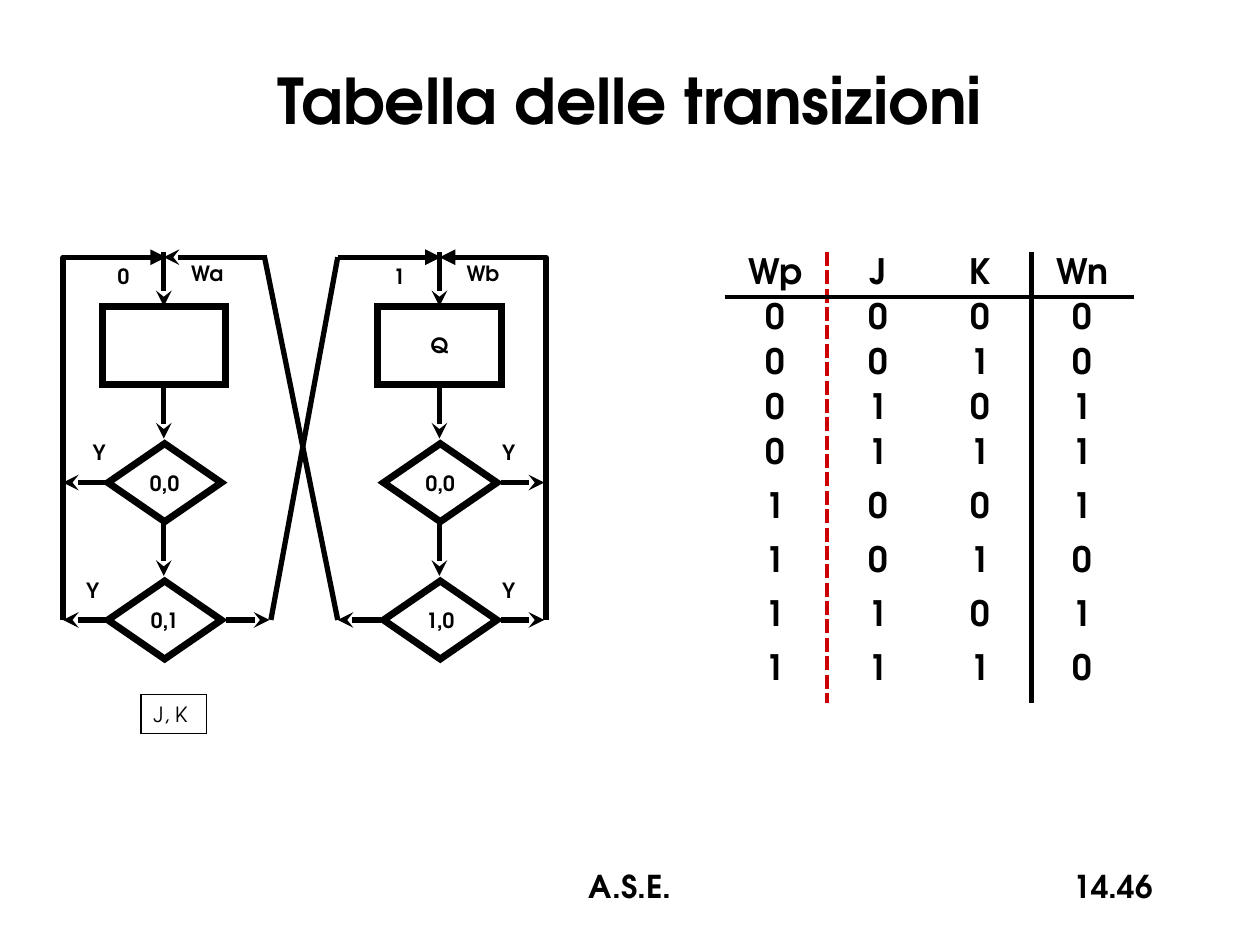
"""Build a slide with a JK flip-flop flow chart and its transition table."""
from typing import NamedTuple, Optional

from lxml import etree
from pptx import Presentation
from pptx.dml.color import RGBColor
from pptx.enum.shapes import MSO_CONNECTOR, MSO_SHAPE
from pptx.enum.text import MSO_ANCHOR, MSO_AUTO_SIZE, PP_ALIGN
from pptx.oxml.ns import qn
from pptx.util import Pt

STRAIGHT = MSO_CONNECTOR.STRAIGHT
RECT, DIAMOND = MSO_SHAPE.RECTANGLE, MSO_SHAPE.DIAMOND
TOP, MIDDLE = MSO_ANCHOR.TOP, MSO_ANCHOR.MIDDLE
LEFT, CENTER, RIGHT = PP_ALIGN.LEFT, PP_ALIGN.CENTER, PP_ALIGN.RIGHT
FIT = MSO_AUTO_SIZE.SHAPE_TO_FIT_TEXT
FONT, BLACK, RED = "TeX Gyre Adventor", "000000", "CC0000"
COLUMN_STEP, TEST_STEP = 157.5, 78.5
AXIS, BUS_Y, TEST_Y = 93.6, 147, 275.75
EXIT_Y = TEST_Y + TEST_STEP


class Label(NamedTuple):
    text: str
    x: float
    y: float
    w: float
    h: float = 21.6
    size: float = 12
    align: PP_ALIGN = CENTER
    anchor: MSO_ANCHOR = TOP
    wrap: bool = False


class Box(NamedTuple):
    kind: MSO_SHAPE
    x: float
    y: float
    w: float
    h: float
    text: str = ""
    width: float = 4
    bold: bool = True
    align: PP_ALIGN = CENTER


class Line(NamedTuple):
    x1: float
    y1: float
    x2: float
    y2: float
    tail: Optional[str] = "stealth"


class State(NamedTuple):
    value: str
    name: str
    content: str
    tests: tuple


LABELS = [
    Label("Tabella delle transizioni", 12, 12, 696, 90, 36, anchor=MIDDLE, wrap=True),
    Label("Y", 45.4, 247.7, 22.3),
    Label("Y", 41.8, 326.2, 22.3),
    Label("Y", 279.4, 247.7, 22.3),
    Label("Y", 279.4, 326.2, 22.3),
    Label("14.46", 516, 492, 150, 36, 18, RIGHT, wrap=True),
    Label("A.S.E.", 246, 492, 228, 36, 18, wrap=True),
]
STATES = [
    State("0", "Wa", "", ("0,0", "0,1")),
    State("1", "Wb", "Q", ("0,0", "1,0")),
]
LINES = [
    Line(62, TEST_Y, 36, TEST_Y),
    Line(61.5, EXIT_Y, 36, EXIT_Y),
    Line(129, EXIT_Y, 154, EXIT_Y),
    Line(152.6, BUS_Y, AXIS, BUS_Y),
    Line(218, EXIT_Y, 193, EXIT_Y),
    Line(193, BUS_Y, 252, BUS_Y, "triangle"),
    Line(286.5, TEST_Y, 311, TEST_Y),
    Line(286.5, EXIT_Y, 311, EXIT_Y),
    Line(154.8, EXIT_Y, 193, BUS_Y, None),
    Line(193, EXIT_Y, 151.2, BUS_Y, None),
]
LOOPS = [(36, 95), (312, 251.2)]
ROWS = ["Wp J K Wn".split(), *map(list, (
    "0000", "0010", "0101", "0111", "1001", "1010", "1101", "1110"))]


def rgb(code: str) -> RGBColor:
    """Turn a hex string into a colour."""
    return RGBColor.from_string(code)


def write(tf, text: str, *, size=12, bold=True, align=CENTER, color=BLACK) -> None:
    """Put one formatted run in the first paragraph."""
    p = tf.paragraphs[0]
    p.alignment = align
    r = p.add_run()
    r.text = text
    r.font.name, r.font.size, r.font.bold = FONT, Pt(size), bold
    r.font.color.rgb = rgb(color)


def stroke(sp, width: float, tail: Optional[str] = None, miter: bool = False) -> None:
    """Give a shape or connector a black line with optional arrowhead and sharp corners."""
    sp.line.color.rgb = rgb(BLACK)
    sp.line.width = Pt(width)
    ln = sp.line._get_or_add_ln()
    if miter:
        etree.SubElement(ln, qn("a:miter"), lim="800000")
    if tail:
        etree.SubElement(ln, qn("a:tailEnd"), type=tail)


def draw_label(s, label: Label) -> None:
    """Draw a text box."""
    sp = s.shapes.add_textbox(Pt(label.x), Pt(label.y), Pt(label.w), Pt(label.h))
    tf = sp.text_frame
    tf.word_wrap, tf.vertical_anchor = label.wrap, label.anchor
    if not label.wrap:
        tf.auto_size = FIT
    write(tf, label.text, size=label.size, align=label.align)


def draw_box(s, box: Box) -> None:
    """Draw an unfilled outlined shape with its text."""
    sp = s.shapes.add_shape(box.kind, Pt(box.x), Pt(box.y), Pt(box.w), Pt(box.h))
    sp.shadow.inherit = False
    sp.fill.background()
    stroke(sp, box.width, miter=True)
    if box.text:
        tf = sp.text_frame
        tf.word_wrap, tf.vertical_anchor = False, MIDDLE
        write(tf, box.text, bold=box.bold, align=box.align)


def draw_line(s, line: Line) -> None:
    """Draw a straight connector."""
    sp = s.shapes.add_connector(STRAIGHT, *map(Pt, line[:4]))
    stroke(sp, 3, line.tail)
    etree.SubElement(sp._element.spPr, qn("a:effectLst"))


def draw_loop(s, outer: float, inner: float) -> None:
    """Draw the path from the exits back to the top of a state."""
    fb = s.shapes.build_freeform(Pt(outer), Pt(EXIT_Y))
    fb.add_line_segments([(Pt(outer), Pt(BUS_Y)), (Pt(inner), Pt(BUS_Y))], close=False)
    sp = fb.convert_to_shape()
    sp.shadow.inherit = False
    sp.fill.background()
    stroke(sp, 3, "triangle")


def draw_state(s, state: State, dx: float) -> None:
    """Draw one state column: box, tests, captions and downward arrows."""
    draw_box(s, Box(RECT, 58.3 + dx, 175, 70.6, 44.6, state.content))
    draw_label(s, Label(state.value, 60.2 + dx, 147, 21.6, align=LEFT))
    draw_label(s, Label(state.name, 102 + dx, 145.5, 33))
    for i, test in enumerate(state.tests):
        draw_box(s, Box(DIAMOND, 61.7 + dx, 253.5 + i * TEST_STEP, 64.8, 44.6, test))
    for y in (144, 219.6, 298.1):
        draw_line(s, Line(AXIS + dx, y, AXIS + dx, y + 31))


def set_border(cell, side: str, color: Optional[str]) -> None:
    """Set one cell border, or clear it when there is no colour."""
    ln = etree.SubElement(cell._tc.get_or_add_tcPr(), qn(f"a:ln{side}"), w=str(Pt(3)))
    if color is None:
        etree.SubElement(ln, qn("a:noFill"))
        return
    fill = etree.SubElement(ln, qn("a:solidFill"))
    etree.SubElement(fill, qn("a:srgbClr"), val=str(rgb(color)))
    if color == RED:
        etree.SubElement(ln, qn("a:prstDash"), val="sysDash")


def draw_table(s) -> None:
    """Draw the transition table with its three ruling lines."""
    frame = s.shapes.add_table(len(ROWS), 4, Pt(414), Pt(144), Pt(234), Pt(258))
    tbl = frame.table
    tbl.first_row = tbl.horz_banding = False
    rules = {1: RED, 3: BLACK}
    for i, row in enumerate(ROWS):
        tbl.rows[i].height = Pt(25.7 if i < 4 else 31)
        for j, text in enumerate(row):
            cell = tbl.cell(i, j)
            set_border(cell, "L", rules.get(j))
            set_border(cell, "R", rules.get(j + 1))
            set_border(cell, "T", BLACK if i == 1 else None)
            set_border(cell, "B", BLACK if i == 0 else None)
            cell.fill.background()
            write(cell.text_frame, text, size=20)


def main() -> None:
    """Build and save the slide."""
    prs = Presentation()
    prs.slide_width, prs.slide_height = Pt(720), Pt(540)
    s = prs.slides.add_slide(prs.slide_layouts[6])
    draw_table(s)
    for i, state in enumerate(STATES):
        draw_state(s, state, i * COLUMN_STEP)
    for line in LINES:
        draw_line(s, line)
    for outer, inner in LOOPS:
        draw_loop(s, outer, inner)
    draw_box(s, Box(RECT, 80.6, 396.7, 37.5, 22.3, "J, K", 0.75, False, LEFT))
    for label in LABELS:
        draw_label(s, label)
    prs.save("out.pptx")


if __name__ == "__main__":
    main()
